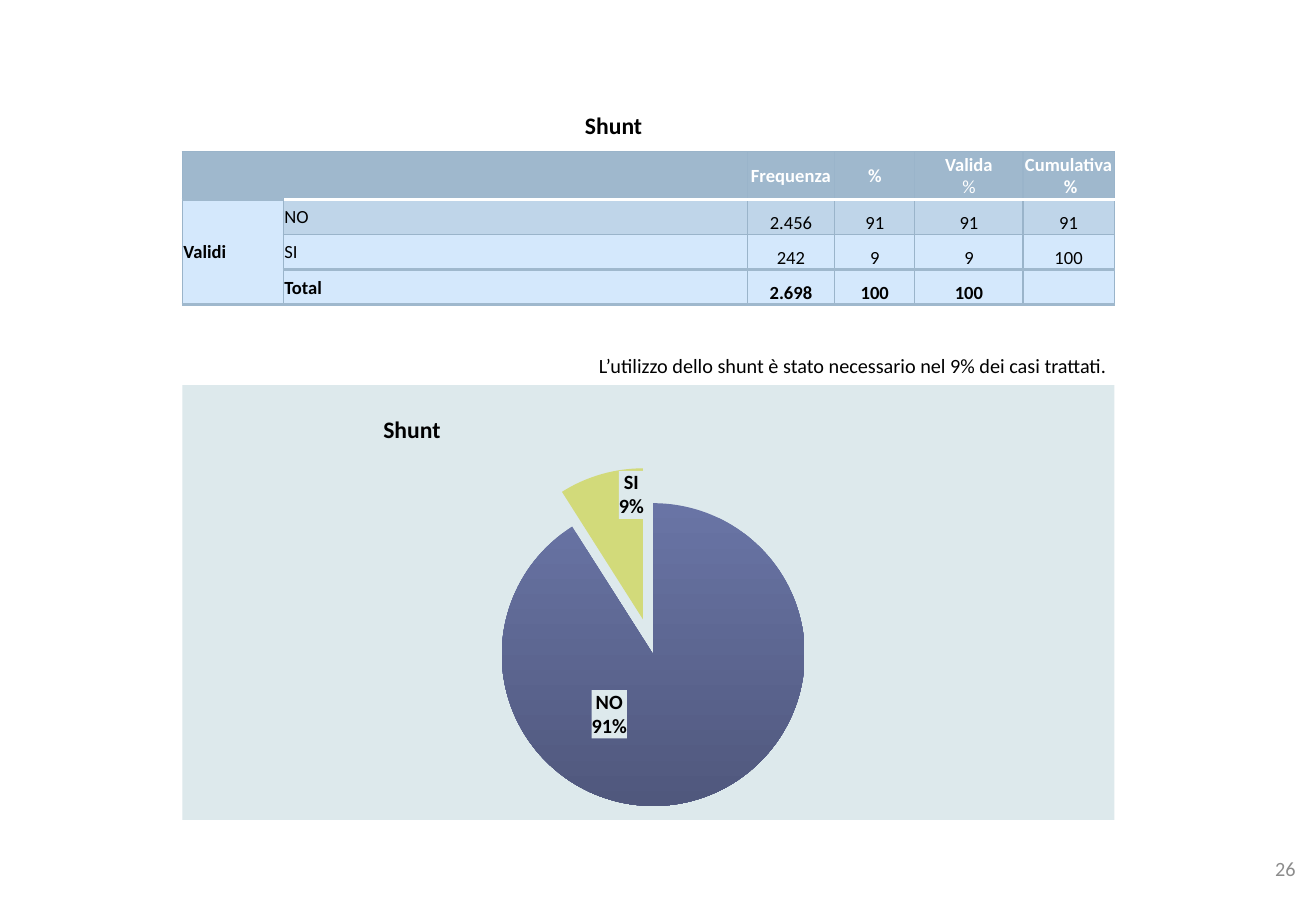
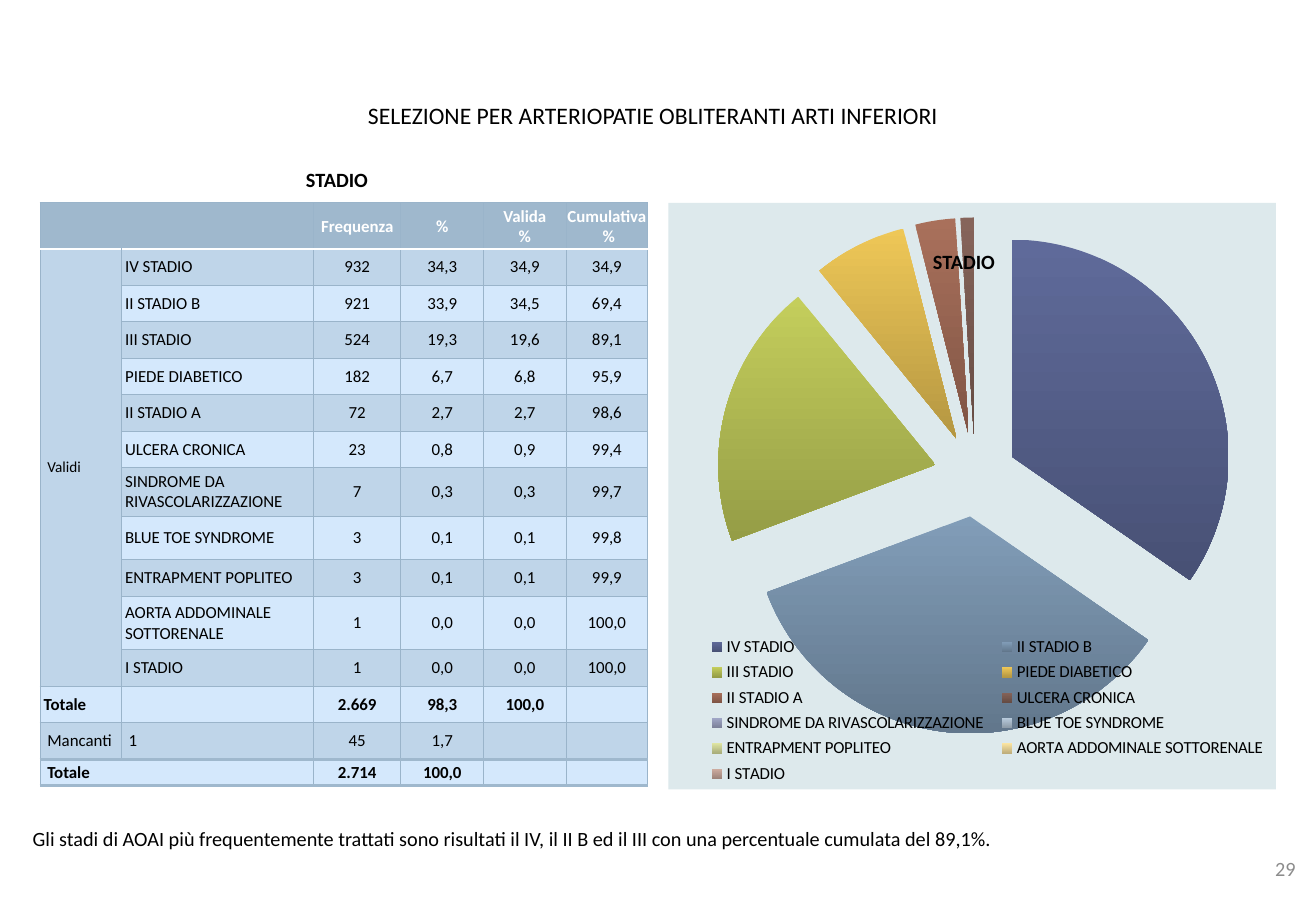
"""Build two slides of clinical frequency tables with matching pie charts."""
import pptx
import pptx.chart.data
import pptx.dml.color
import pptx.enum.chart
import pptx.enum.text
import pptx.oxml
import pptx.oxml.ns
import pptx.util
from pptx.util import Inches

FONT = "Calibri"
BLACK, WHITE, GREY = "000000", "FFFFFF", "8C8C8C"
HEADER, RULE = "9FB8CD", "9AB4CA"
PLAIN, BAND = "D4E8FC", "BFD5E9"
PANEL = "DDE9EC"
TIGHT = (0.01, 0.01, 0.01, 0)
EVEN = (0.03, 0.03, 0.03, 0.03)
WIDE = (0.06, 0, 0.06, 0)
ALIGN = pptx.enum.text.PP_ALIGN
ANCHOR = pptx.enum.text.MSO_ANCHOR
qn = pptx.oxml.ns.qn
NAMESPACES = pptx.oxml.ns.nsdecls("a", "c")

HEADINGS = ["", "", "Frequenza", "%", "Valida\n%", "Cumulativa\n %"]
SHUNT_ROWS = [
    HEADINGS,
    ["Validi", "NO", "2.456", "91", "91", "91"],
    ["", "SI", "242", "9", "9", "100"],
    ["", "Total", "2.698", "100", "100", ""],
]
STAGES = [
    ["IV STADIO", "932", "34,3", "34,9", "34,9"],
    ["II STADIO B", "921", "33,9", "34,5", "69,4"],
    ["III STADIO", "524", "19,3", "19,6", "89,1"],
    ["PIEDE DIABETICO", "182", "6,7", "6,8", "95,9"],
    ["II STADIO A", "72", "2,7", "2,7", "98,6"],
    ["ULCERA CRONICA", "23", "0,8", "0,9", "99,4"],
    ["SINDROME DA RIVASCOLARIZZAZIONE", "7", "0,3", "0,3", "99,7"],
    ["BLUE TOE SYNDROME", "3", "0,1", "0,1", "99,8"],
    ["ENTRAMENT POPLITEO".replace("ENTRAMENT", "ENTRAPMENT"), "3", "0,1", "0,1", "99,9"],
    ["AORTA ADDOMINALE SOTTORENALE", "1", "0,0", "0,0", "100,0"],
    ["I STADIO", "1", "0,0", "0,0", "100,0"],
]
STAGES[8][0] = "ENTRAPMENT POPLITEO"
STAGE_ROWS = [
    HEADINGS,
    *[["" if index else "Validi", *stage] for index, stage in enumerate(STAGES)],
    ["Totale", "", "2.669", "98,3", "100,0", ""],
    ["Mancanti", "1", "45", "1,7", "", ""],
    ["Totale", "", "2.714", "100,0", "", ""],
]
STAGE_COLORS = ["5F6A9A", "819DB8", "C4CE5C", "EEC757", "A9705B", "86645A",
                "A2A8C8", "B9CCDD", "DFE5A2", "FBE5A2", "D0AEA2"]


def color(code):
    """Turn a hex string into a colour."""
    return pptx.dml.color.RGBColor.from_string(code)


def shade(code, factor=0.76):
    """Darken a hex colour by a factor."""
    return "".join(f"{round(int(code[i:i + 2], 16) * factor):02X}" for i in (0, 2, 4))


def add_span(para, text, size, code=BLACK, bold=False):
    """Add one formatted run to a paragraph."""
    span = para.add_run()
    span.text = text
    span.font.name = FONT
    span.font.size = pptx.util.Pt(size)
    span.font.bold = bold
    span.font.color.rgb = color(code)


def add_text(page, text, place, size=12, code=BLACK, bold=False,
             align=ALIGN.LEFT, anchor=ANCHOR.TOP):
    """Add a one-paragraph text box."""
    box = page.shapes.add_textbox(*map(Inches, place))
    box.text_frame.word_wrap = True
    box.text_frame.vertical_anchor = anchor
    para = box.text_frame.paragraphs[0]
    para.alignment = align
    add_span(para, text, size, code, bold)


def add_title(page, text, place, bold=False):
    """Add a centred slide or chart title."""
    add_text(page, text, place, 14, BLACK, bold, ALIGN.CENTER, ANCHOR.MIDDLE)


def add_page(deck, number):
    """Add a blank slide with its page number."""
    page = deck.slides.add_slide(deck.slide_layouts[6])
    add_text(page, number, (9.88, 6.95, 0.88, 0.4), 12, GREY,
             align=ALIGN.RIGHT, anchor=ANCHOR.MIDDLE)
    return page


def set_borders(cell, **sides):
    """Draw the four cell borders from (colour, points) pairs."""
    for side in "LRTB":
        code, width = sides.get(side, (RULE, 0.75))
        cell._tc.get_or_add_tcPr().append(pptx.oxml.parse_xml(
            f'<a:ln{side} {NAMESPACES} w="{int(pptx.util.Pt(width))}"><a:solidFill>'
            f'<a:srgbClr val="{code}"/></a:solidFill></a:ln{side}>'))


def write_cell(cell, text, size, code, bold, align, anchor, inset, last_bold=True):
    """Write the lines of a table cell."""
    (cell.margin_left, cell.margin_top,
     cell.margin_right, cell.margin_bottom) = map(Inches, inset)
    cell.vertical_anchor = anchor
    lines = text.split("\n")
    for index, line in enumerate(lines):
        frame = cell.text_frame
        para = frame.add_paragraph() if index else frame.paragraphs[0]
        para.alignment = align
        if line:
            is_last = index == len(lines) - 1
            add_span(para, line, size, code, bold and (last_bold or not is_last))
        else:
            para._p.append(pptx.oxml.parse_xml(
                f'<a:endParaRPr {NAMESPACES} sz="{size * 100}"/>'))


def add_data_table(page, place, widths, heights, rows, merges, size, inset,
                   anchor, label_top, label_fill, overrides):
    """Add a banded table with a header and a ruled closing row."""
    left, top = place
    table = page.shapes.add_table(
        len(rows), len(widths), Inches(left), Inches(top),
        Inches(sum(widths)), Inches(sum(heights))).table
    for column, width in zip(table.columns, widths):
        column.width = Inches(width)
    for line, height in zip(table.rows, heights):
        line.height = Inches(height)
    for first, last in merges:
        table.cell(*first).merge(table.cell(*last))
    closing = len(rows) - 1
    for r, row in enumerate(rows):
        total = any(text.startswith("Total") for text in row)
        for c, text in enumerate(row):
            cell = table.cell(r, c)
            bottom_row = r + cell.span_height - 1 if cell.is_merge_origin else r
            sides = {}
            if r == 0:
                sides["B"] = (WHITE, 2)
            elif r == 1:
                sides["T"] = (WHITE if c else label_top, 2)
            if r == closing:
                sides["T"] = (HEADER, 2)
            if bottom_row >= closing - 1:
                sides["B"] = (HEADER, 2)
            set_borders(cell, **sides)
            banded = r % 2 and r < closing
            fill = HEADER if r == 0 else BAND if banded else PLAIN
            if r == 1 and c == 0:
                fill = label_fill
            cell.fill.solid()
            cell.fill.fore_color.rgb = color(fill)
            style = {
                "size": size,
                "code": BLACK if r else WHITE,
                "bold": r == 0 or total,
                "align": ALIGN.CENTER if c > 1 else ALIGN.LEFT,
                "anchor": anchor if r and c > 1 else ANCHOR.MIDDLE,
                "inset": inset if r else TIGHT,
            }
            write_cell(cell, text, **{**style, **overrides.get((r, c), {})})


def manual_layout(x, y, size=None, inner=False):
    """Make a chart layout element from fractions of the chart."""
    target = '<c:layoutTarget val="inner"/>' if inner else ""
    modes = '<c:xMode val="edge"/><c:yMode val="edge"/>' if size else ""
    extent = f'<c:w val="{size[0]}"/><c:h val="{size[1]}"/>' if size else ""
    return (f'<c:layout {NAMESPACES}><c:manualLayout>{target}{modes}<c:x val="{x}"/>'
            f'<c:y val="{y}"/>{extent}</c:manualLayout></c:layout>')


def panel_fill():
    """Make the pale fill shared by the chart and its labels."""
    return (f'<c:spPr {NAMESPACES}><a:solidFill><a:srgbClr val="{PANEL}"/></a:solidFill>'
            '<a:ln><a:noFill/></a:ln></c:spPr>')


def add_pie(page, place, categories, values, colors, explosion, plot_layout):
    """Add an exploded pie whose slices fade from top to bottom."""
    data = pptx.chart.data.CategoryChartData()
    data.categories = categories
    data.add_series("Series 1", values)
    chart = page.shapes.add_chart(
        pptx.enum.chart.XL_CHART_TYPE.PIE, *map(Inches, place), data).chart
    chart.has_title = False
    chart.has_legend = False
    chart.font.name = FONT
    chart.font.size = pptx.util.Pt(10)
    chart.font.color.rgb = color(BLACK)
    plot = chart.plots[0]
    plot.vary_by_categories = True
    series = plot.series[0]
    series._element.find(qn("c:tx")).addnext(pptx.oxml.parse_xml(
        f'<c:explosion {NAMESPACES} val="{explosion}"/>'))
    for index, (upper, lower) in enumerate(colors):
        fill = series.points[index].format.fill
        fill.gradient()
        fill.gradient_angle = 270
        for stop, code in zip(fill.gradient_stops, (upper, lower)):
            stop.color.rgb = color(code)
    space = chart._chartSpace
    space.find(qn("c:chart")).addnext(pptx.oxml.parse_xml(panel_fill()))
    area = space.find(".//" + qn("c:plotArea"))
    for old in area.findall(qn("c:layout")):
        area.remove(old)
    area.insert(0, pptx.oxml.parse_xml(plot_layout))
    return chart


def label_slices(chart, offsets):
    """Label each slice with category and percentage, moved by an offset."""
    shared = (
        f'{panel_fill()}<c:txPr><a:bodyPr/><a:p><a:pPr><a:defRPr sz="1200" b="1"/></a:pPr>'
        '<a:endParaRPr lang="it-IT"/></a:p></c:txPr><c:dLblPos val="ctr"/>'
        '<c:showLegendKey val="0"/><c:showVal val="0"/><c:showCatName val="1"/>'
        '<c:showSerName val="0"/><c:showPercent val="1"/><c:showBubbleSize val="0"/>'
        '<c:separator>\n</c:separator>')
    labels = "".join(
        f'<c:dLbl><c:idx val="{index}"/>{manual_layout(*offset)}{shared}</c:dLbl>'
        for index, offset in enumerate(offsets))
    chart.plots[0].series[0]._element.find(qn("c:cat")).addprevious(
        pptx.oxml.parse_xml(f'<c:dLbls {NAMESPACES}>{labels}{shared}</c:dLbls>'))


def add_legend(chart, layout):
    """Add a legend that overlays the plot."""
    chart.has_legend = True
    legend = chart.legend
    legend.position = pptx.enum.chart.XL_LEGEND_POSITION.RIGHT
    legend.include_in_layout = True
    legend.font.size = pptx.util.Pt(10)
    legend.font.name = FONT
    for old in legend._element.findall(qn("c:layout")):
        legend._element.remove(old)
    legend._element.find(qn("c:legendPos")).addnext(pptx.oxml.parse_xml(layout))


def build_shunt(deck):
    """Build the slide about shunt use."""
    page = add_page(deck, "26")
    add_title(page, "Shunt", (4.33, 0.83, 1.44, 0.4), True)
    add_data_table(
        page, (1.5, 1.25), [0.83, 3.82, 0.72, 0.66, 0.89, 0.75], [0.39] + [0.29] * 3,
        SHUNT_ROWS, [((0, 0), (0, 1)), ((1, 0), (3, 0))], 11, TIGHT, ANCHOR.BOTTOM,
        HEADER, PLAIN, {(0, 4): {"last_bold": False}, (1, 0): {"bold": True}})
    chart = add_pie(
        page, (1.5, 3.17, 7.67, 3.58), ["NO", "SI"], [91, 9],
        [("6974A5", shade("6974A5")), ("D2DA7A", "D2DA7A")], 12,
        manual_layout(0, 0.19, (1, 0.78), True))
    label_slices(chart, [(-0.07, -0.03), (0.01, -0.12)])
    add_title(page, "Shunt", (2.67, 3.33, 1.44, 0.4), True)
    add_text(page, "L’utilizzo dello shunt è stato necessario nel 9% dei casi trattati.",
             (4.83, 2.86, 4.58, 0.3))


def build_stages(deck):
    """Build the slide about disease stages."""
    page = add_page(deck, "29")
    add_title(page, "SELEZIONE PER ARTERIOPATIE OBLITERANTI ARTI INFERIORI",
              (0.5, 0.75, 9.75, 0.4))
    add_text(page, "Gli stadi di AOAI più frequentemente trattati sono risultati il IV, "
             "il II B ed il III con una percentuale cumulata del 89,1%.",
             (0.17, 6.75, 10.08, 0.5))
    heights = [0.38] + [0.3] * 6 + [0.4, 0.36, 0.3, 0.44] + [0.3] * 3 + [0.22]
    overrides = {(14, c): {"inset": WIDE} for c in range(6)}
    overrides |= {(13, c): {"inset": WIDE} for c in range(2)}
    overrides[1, 0] = {"inset": WIDE, "size": 9}
    add_data_table(
        page, (0.33, 1.67), [0.67, 1.58, 0.72, 0.68, 0.68, 0.67], heights, STAGE_ROWS,
        [((0, 0), (0, 1)), ((1, 0), (11, 0)), ((14, 0), (14, 1))], 10, EVEN,
        ANCHOR.MIDDLE, WHITE, BAND, overrides)
    chart = add_pie(
        page, (5.5, 1.67, 5, 4.83), [stage[0] for stage in STAGES],
        [35, 35, 20, 7, 3, 1, 0, 0, 0, 0, 0],
        [(code, shade(code)) for code in STAGE_COLORS], 19,
        manual_layout(0.08, 0, (0.85, 0.93), True))
    add_legend(chart, manual_layout(0.05, 0.73, (0.95, 0.27)))
    for left, top in ((7.58, 2), (2.42, 1.33)):
        add_text(page, "STADIO", (left, top, 0.83, 0.3), bold=True)


def main():
    """Build and save the deck."""
    deck = pptx.Presentation()
    deck.slide_width, deck.slide_height = Inches(10.83), Inches(7.5)
    build_shunt(deck)
    build_stages(deck)
    deck.save("out.pptx")


if __name__ == "__main__":
    main()
